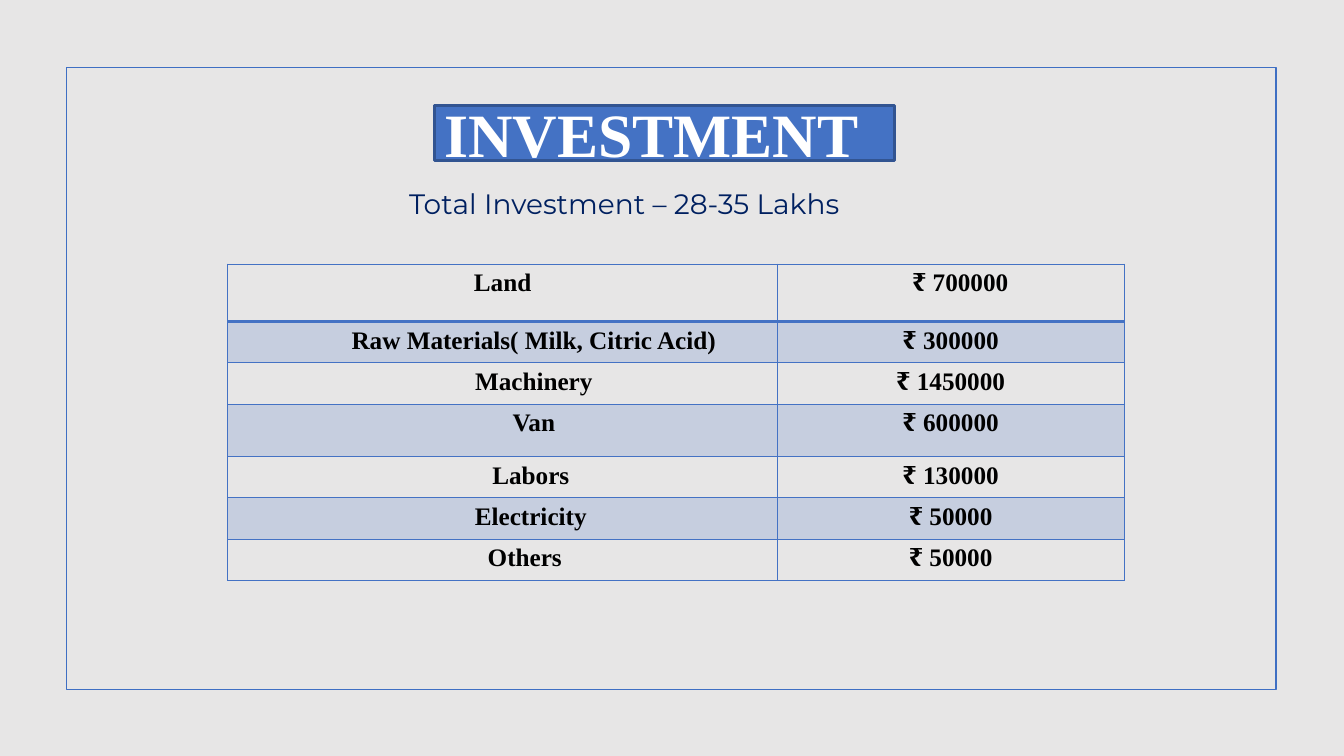
from dataclasses import dataclass

from lxml import etree
from pptx import Presentation
from pptx.dml.color import RGBColor
from pptx.enum.shapes import MSO_SHAPE
from pptx.enum.text import MSO_ANCHOR, PP_ALIGN
from pptx.oxml.ns import qn
from pptx.util import Inches, Pt

RECTANGLE = MSO_SHAPE.RECTANGLE
MIDDLE = MSO_ANCHOR.MIDDLE
CENTER = PP_ALIGN.CENTER
JUSTIFY = PP_ALIGN.JUSTIFY


@dataclass
class Theme:
    background: str = "E7E6E6"
    frame: str = "3F6FC3"
    accent: str = "4472C4"
    title_line: str = "325491"
    title_text: str = "FFFFFF"
    subtitle_text: str = "002060"
    table_text: str = "000000"
    serif: str = "Times New Roman"
    sans: str = "Montserrat"
    title_size: int = 44
    subtitle_size: int = 20
    table_size: int = 18


theme = Theme()


def write_text(text_frame, text, font_name, size, color, bold, alignment):
    paragraph = text_frame.paragraphs[0]
    paragraph.alignment = alignment
    run = paragraph.add_run()
    run.text = text
    run.font.name = font_name
    run.font.size = Pt(size)
    run.font.bold = bold
    run.font.color.rgb = RGBColor.from_string(color)


def add_border(cell, side, width):
    line = etree.SubElement(cell._tc.get_or_add_tcPr(), qn(f"a:{side}"), w=str(Pt(width)))
    fill = etree.SubElement(line, qn("a:solidFill"))
    etree.SubElement(fill, qn("a:srgbClr"), val=theme.accent)


presentation = Presentation()
presentation.slide_width = Inches(13.33)
presentation.slide_height = Inches(7.5)
slide = presentation.slides.add_slide(presentation.slide_layouts[6])
slide.background.fill.solid()
slide.background.fill.fore_color.rgb = RGBColor.from_string(theme.background)

frame = slide.shapes.add_shape(RECTANGLE, Inches(0.66), Inches(0.67), Inches(12), Inches(6.17))
frame.shadow.inherit = False
frame.fill.background()
frame.line.color.rgb = RGBColor.from_string(theme.frame)
frame.line.width = Pt(1.25)

title = slide.shapes.add_shape(RECTANGLE, Inches(4.31), Inches(1.05), Inches(4.56), Inches(0.54))
title.shadow.inherit = False
title.fill.solid()
title.fill.fore_color.rgb = RGBColor.from_string(theme.accent)
title.line.color.rgb = RGBColor.from_string(theme.title_line)
title.line.width = Pt(2)
title.text_frame.word_wrap = True
title.text_frame.vertical_anchor = MIDDLE
write_text(title.text_frame, "INVESTMENT", theme.serif, theme.title_size,
           theme.title_text, True, JUSTIFY)

costs = [
    ("Land", 0, "₹ 700000", 0.19, 0.57),
    ("Raw Materials( Milk, Citric Acid)", 0.62, "₹ 300000", 0, 0.41),
    ("Machinery", 0.62, "₹ 1450000", 0, 0.41),
    ("Van", 0.62, "₹ 600000", 0, 0.52),
    ("Labors", 0.56, "₹ 130000", 0, 0.41),
    ("Electricity", 0.56, "₹ 50000", 0, 0.41),
    ("Others", 0.44, "₹ 50000", 0, 0.41),
]
table = slide.shapes.add_table(len(costs), 2, Inches(2.26), Inches(2.62),
                               Inches(8.89), Inches(3.15)).table
table.first_row = False
table.horz_banding = False
table.columns[0].width = Inches(5.45)
table.columns[1].width = Inches(3.44)

for row, (item, item_indent, amount, amount_indent, height) in enumerate(costs):
    table.rows[row].height = Inches(height)
    for column, (text, indent) in enumerate([(item, item_indent), (amount, amount_indent)]):
        cell = table.cell(row, column)
        cell.margin_left = Inches(0.1 + indent)
        write_text(cell.text_frame, text, theme.serif, theme.table_size,
                   theme.table_text, True, CENTER)
        add_border(cell, "lnL", 1)
        add_border(cell, "lnR", 1)
        add_border(cell, "lnT", 2 if row == 1 else 1)
        add_border(cell, "lnB", 2 if row == 0 else 1)
        if row % 2:
            cell.fill.solid()
            cell.fill.fore_color.rgb = RGBColor.from_string(theme.accent)
            color = cell._tc.tcPr.find(qn("a:solidFill")).find(qn("a:srgbClr"))
            etree.SubElement(color, qn("a:alpha"), val="20000")
        else:
            cell.fill.background()

subtitle = slide.shapes.add_textbox(Inches(3.96), Inches(1.8), Inches(5.44), Inches(0.44))
subtitle.text_frame.word_wrap = True
write_text(subtitle.text_frame, "Total Investment – 28-35 Lakhs", theme.sans,
           theme.subtitle_size, theme.subtitle_text, False, JUSTIFY)

presentation.save("out.pptx")
